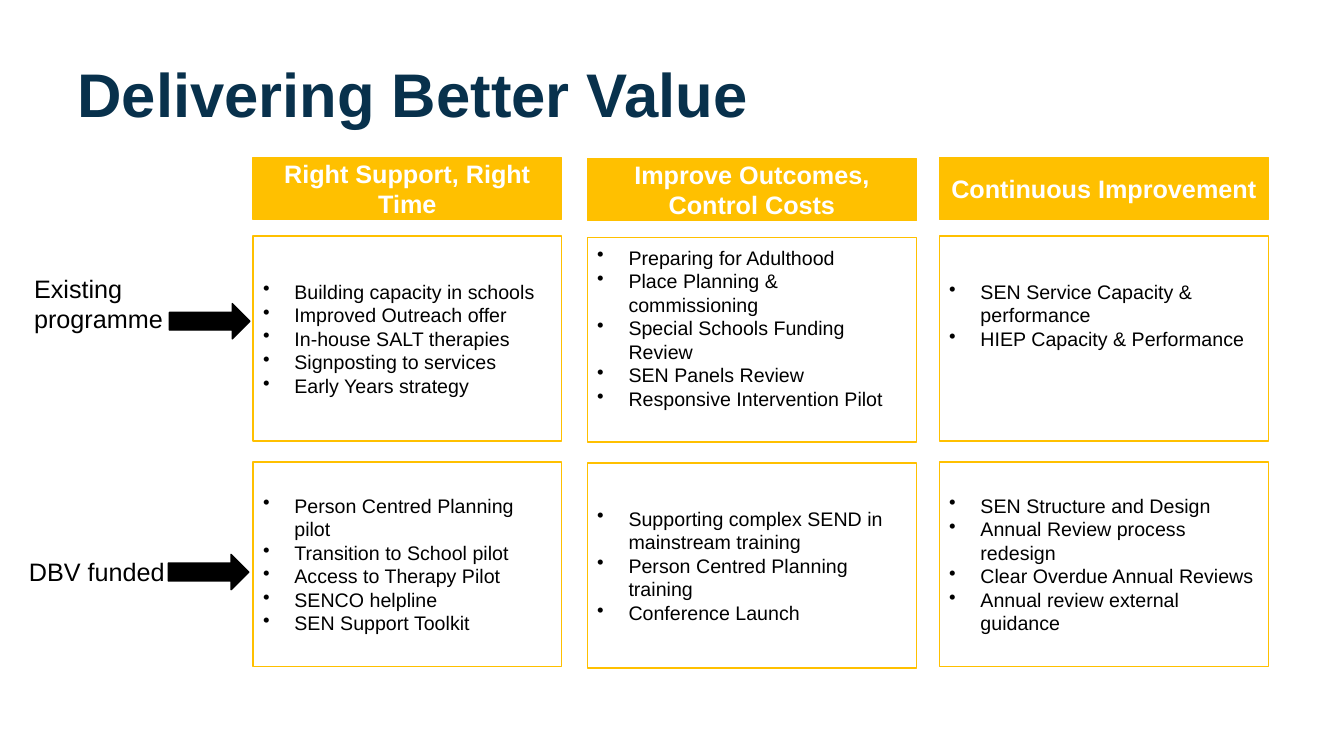
import pptx
import pptx.util
import pptx.dml.color
import pptx.enum.shapes
import pptx.enum.text
import lxml.etree
from pptx.util import Cm

MSO = pptx.enum.shapes.MSO_SHAPE
ANCHOR = pptx.enum.text.MSO_ANCHOR
ALIGN = pptx.enum.text.PP_ALIGN
GOLD, BLACK, WHITE, NAVY = "FFC000", "000000", "FFFFFF", "08314C"


def rgb(value):
    return pptx.dml.color.RGBColor.from_string(value)


def write(sp, text, size=18, color=BLACK, bold=False, align=ALIGN.LEFT,
          anchor=ANCHOR.MIDDLE, bullet=False, spacing=None):
    tf = sp.text_frame
    tf.word_wrap = True
    tf.vertical_anchor = anchor
    for i, line in enumerate(text.split("\n")):
        p = tf.add_paragraph() if i else tf.paragraphs[0]
        p.alignment = align
        if spacing:
            p.line_spacing = spacing
        if bullet:
            pPr = p._p.get_or_add_pPr()
            pPr.set("marL", str(Cm(0.79)))
            pPr.set("indent", str(-Cm(0.79)))
            bu = lxml.etree.SubElement(pPr, pptx.oxml.ns.qn("a:buChar"))
            bu.set("char", "•")
        r = p.add_run()
        r.text = line
        r.font.name = "Arial"
        r.font.size = pptx.util.Pt(size)
        r.font.bold = bold
        r.font.color.rgb = rgb(color)


prs = pptx.Presentation()
prs.slide_width, prs.slide_height = Cm(33.87), Cm(19.05)
s = prs.slides.add_slide(prs.slide_layouts[6])

title = s.shapes.add_textbox(Cm(1.7), Cm(1.32), Cm(29.64), Cm(2.29))
write(title, "Delivering Better Value", size=44, color=NAVY, bold=True, spacing=0.9)

columns = [
    (6.38, 7.77, 0, "Right Support, Right Time", [
        "Building capacity in schools\nImproved Outreach offer\nIn-house SALT therapies\n"
        "Signposting to services\nEarly Years strategy",
        "Person Centred Planning pilot\nTransition to School pilot\nAccess to Therapy Pilot\n"
        "SENCO helpline\nSEN Support Toolkit"]),
    (14.8, 8.3, 0.03, "Improve Outcomes, Control Costs", [
        "Preparing for Adulthood\nPlace Planning & commissioning\n"
        "Special Schools Funding Review\nSEN Panels Review\nResponsive Intervention Pilot",
        "Supporting complex SEND in mainstream training\n"
        "Person Centred Planning training\nConference Launch"]),
    (23.67, 8.3, 0, "Continuous Improvement", [
        "SEN Service Capacity & performance\nHIEP Capacity & Performance",
        "SEN Structure and Design\nAnnual Review process redesign\n"
        "Clear Overdue Annual Reviews\nAnnual review external guidance"]),
]
bottom_insets = {(1, 0): 0.72, (2, 0): 1.31}

for col, (left, width, drop, heading, cells) in enumerate(columns):
    header = s.shapes.add_shape(MSO.RECTANGLE, Cm(left), Cm(3.97 + drop), Cm(width), Cm(1.56))
    header.fill.solid()
    header.fill.fore_color.rgb = rgb(GOLD)
    write(header, heading, color=WHITE, bold=True, align=ALIGN.CENTER)
    boxes = [header]
    for row, items in enumerate(cells):
        box = s.shapes.add_shape(MSO.RECTANGLE, Cm(left), Cm(5.95 + 5.69 * row + drop),
                                 Cm(width), Cm(5.16))
        box.fill.background()
        write(box, items, size=14, bullet=True)
        box.text_frame.margin_bottom = Cm(bottom_insets.get((col, row), 0.13))
        boxes.append(box)
    for sp in boxes:
        sp.shadow.inherit = False
        sp.line.color.rgb = rgb(GOLD)
        sp.line.width = pptx.util.Pt(1)

row_labels = [
    ("Existing programme", 0.61, 6.76, 1.8, 4.27, 7.65),
    ("DBV funded", 0.48, 13.89, 1.02, 4.24, 13.97),
]
for text, left, top, height, arrow_left, arrow_top in row_labels:
    arrow = s.shapes.add_shape(MSO.RIGHT_ARROW, Cm(arrow_left), Cm(arrow_top), Cm(2.03), Cm(0.89))
    arrow.shadow.inherit = False
    arrow.fill.solid()
    arrow.fill.fore_color.rgb = rgb(BLACK)
    arrow.line.color.rgb = rgb(BLACK)
    arrow.line.width = pptx.util.Pt(1)
    label = s.shapes.add_textbox(Cm(left), Cm(top), Cm(4.55), Cm(height))
    write(label, text, anchor=ANCHOR.TOP)

prs.save("out.pptx")
